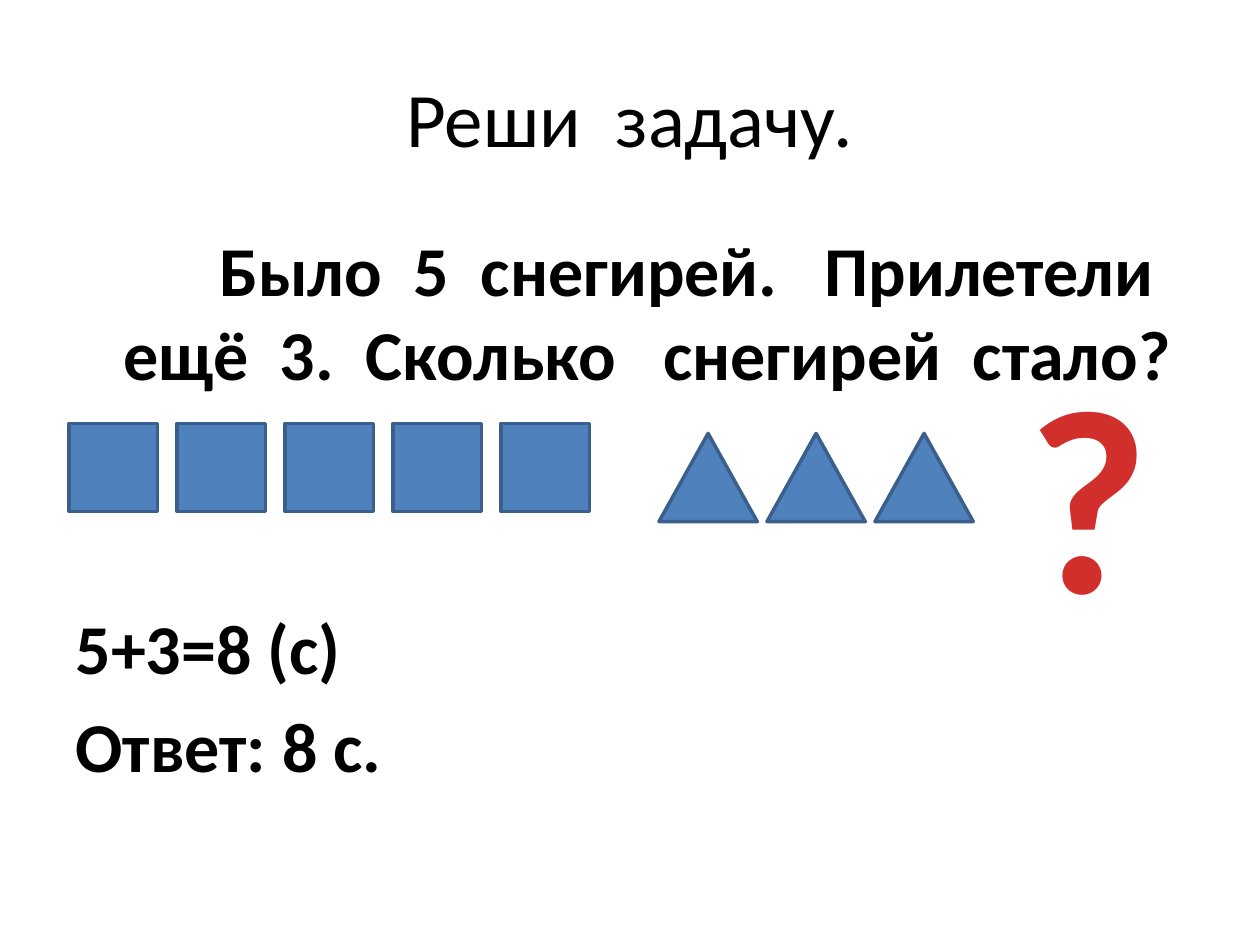
from lxml import etree
from pptx import Presentation
from pptx.dml.color import RGBColor
from pptx.enum.shapes import MSO_SHAPE as Shape
from pptx.enum.text import MSO_ANCHOR as Anchor, MSO_AUTO_SIZE as AutoSize, PP_ALIGN as Align
from pptx.oxml.ns import qn
from pptx.util import Inches, Pt

COLORS = {"text": "000000", "fill": "4F81BD", "line": "3A5F8C", "question": "D02F2C"}
FONT = "Calibri"
HANGING = Inches(0.38)
STEP = Inches(0.857)


def color(key):
    return RGBColor.from_string(COLORS[key])


def place(shape, box):
    shape.left, shape.top, shape.width, shape.height = map(Inches, box)


def add_run(paragraph, text, size, bold=False, color_key="text"):
    run = paragraph.add_run()
    run.text = text
    font = run.font
    font.name, font.size, font.bold = FONT, Pt(size), bold
    font.color.rgb = color(color_key)


def fill_title(title, box):
    place(title, box)
    title.text_frame.vertical_anchor = Anchor.MIDDLE
    heading = title.text_frame.paragraphs[0]
    heading.alignment = Align.CENTER
    add_run(heading, "Реши  задачу.", 44)


def fill_problem(body, box):
    """Write the problem, then its solution below the room left for the counters."""
    place(body, box)
    frame = body.text_frame
    frame.auto_size = AutoSize.NONE
    lines = [
        ("Было  5  снегирей.   Прилетели  ещё  3.  Сколько   снегирей  стало?", Inches(0.76), 0),
        ("5+3=8 (с)", -HANGING, 120),
        ("Ответ: 8 с.", -HANGING, 8),
    ]
    for index, (text, first_indent, space_before) in enumerate(lines):
        paragraph = frame.add_paragraph() if index else frame.paragraphs[0]
        properties = paragraph._p.get_or_add_pPr()
        properties.set("marL", str(HANGING))
        properties.set("indent", str(first_indent))
        etree.SubElement(properties, qn("a:buNone"))
        paragraph.space_before = Pt(space_before)
        add_run(paragraph, text, 40, bold=True)


def add_counters(slide, preset, count, box):
    """Repeat one counter to the right; box is the first one's place."""
    left, top, width, height = map(Inches, box)
    for index in range(count):
        counter = slide.shapes.add_shape(preset, left + index * STEP, top, width, height)
        counter.shadow.inherit = False
        counter.fill.solid()
        counter.fill.fore_color.rgb = color("fill")
        counter.line.color.rgb = color("line")
        counter.line.width = Pt(2)


def add_question_mark(slide, box):
    frame = slide.shapes.add_textbox(*map(Inches, box)).text_frame
    frame.word_wrap = False
    frame.auto_size = AutoSize.SHAPE_TO_FIT_TEXT
    mark = frame.paragraphs[0]
    mark.alignment = Align.CENTER
    add_run(mark, "?", 150, bold=True, color_key="question")


def main():
    deck = Presentation()
    deck.slide_width, deck.slide_height = Inches(10), Inches(7.5)
    slide = deck.slides.add_slide(deck.slide_layouts[1])
    fill_title(slide.shapes.title, (0.5, 0.3, 9, 1.25))
    fill_problem(slide.placeholders[1], (0.5, 1.75, 9, 4.95))
    add_counters(slide, Shape.RECTANGLE, 5, (0.55, 3.36, 0.7, 0.7))
    add_counters(slide, Shape.ISOSCELES_TRIANGLE, 3, (5.23, 3.44, 0.78, 0.7))
    add_question_mark(slide, (8.05, 2.58, 1.18, 2.63))
    deck.save("out.pptx")


if __name__ == "__main__":
    main()
